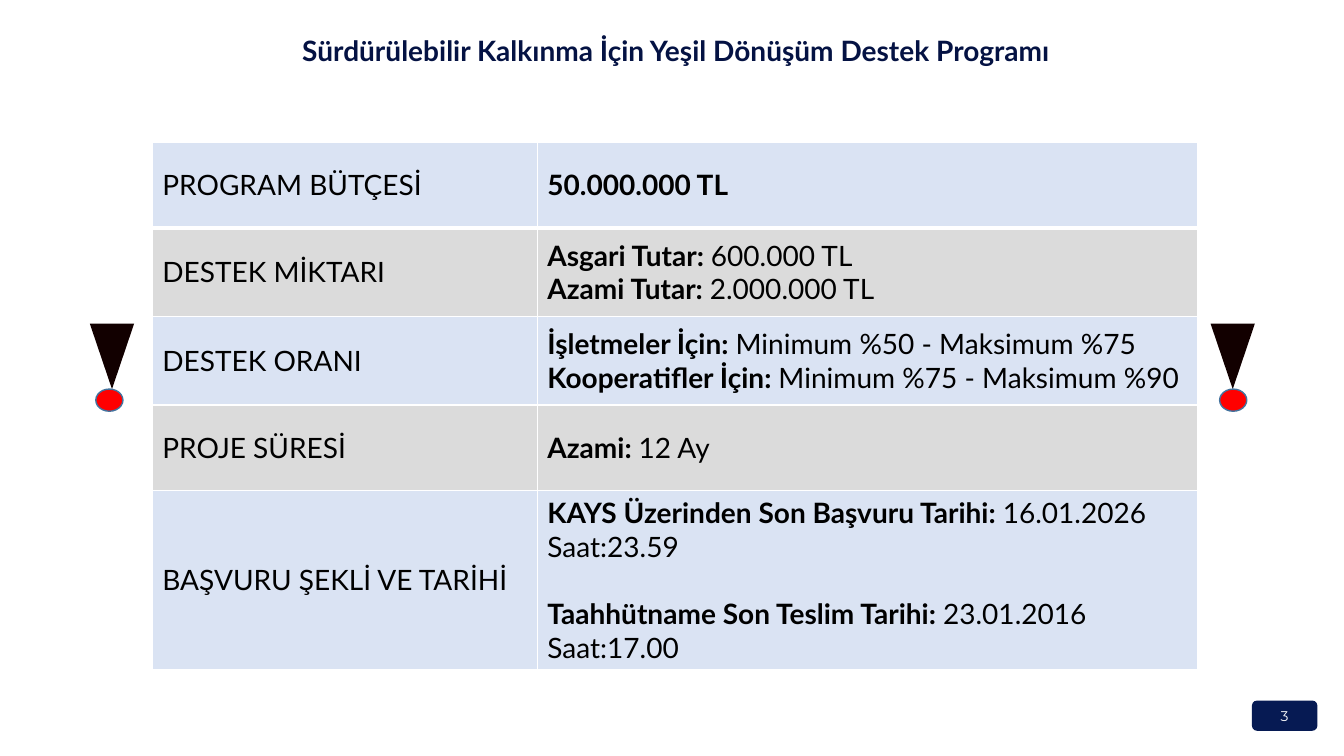
import pptx
import pptx.util
import pptx.dml.color
import pptx.enum.shapes
import pptx.enum.text
import pptx.oxml.ns
import lxml.etree

RGB = pptx.dml.color.RGBColor
SHAPE = pptx.enum.shapes.MSO_SHAPE
ALIGN = pptx.enum.text.PP_ALIGN
MIDDLE = pptx.enum.text.MSO_ANCHOR.MIDDLE
Pt = pptx.util.Pt

WHITE = RGB(0xFF, 0xFF, 0xFF)
BLACK = RGB(0, 0, 0)
NAVY = RGB(0x06, 0x1A, 0x53)
INK = RGB(0x04, 0x12, 0x43)
BLUE = RGB(0xDA, 0xE3, 0xF3)
GREY = RGB(0xDB, 0xDB, 0xDB)
RED = RGB(0xFF, 0, 0)
DARK = RGB(0x12, 0, 0)
EDGE = RGB(0x43, 0x73, 0x9E)

# The slide is a grid of 100 columns by 100 rows.
WIDE = pptx.util.Inches(13.33)
HIGH = pptx.util.Inches(7.5)

TITLE = "Sürdürülebilir Kalkınma İçin Yeşil Dönüşüm Destek Programı"
# Row height, label, then lines of (bold part, plain part).
FACTS = [
    (11.33, "PROGRAM BÜTÇESİ", [("50.000.000 TL", "")]),
    (11.73, "DESTEK MİKTARI", [("Asgari Tutar: ", "600.000 TL"),
                               ("Azami Tutar: ", "2.000.000 TL")]),
    (11.73, "DESTEK ORANI",
     [("İşletmeler İçin: ", "Minimum %50 - Maksimum %75"),
      ("Kooperatifler İçin: ", "Minimum %75 - Maksimum %90")]),
    (11.33, "PROJE SÜRESİ", [("Azami: ", "12 Ay")]),
    (23.6, "BAŞVURU ŞEKLİ VE TARİHİ",
     [("KAYS Üzerinden Son Başvuru Tarihi: ", "16.01.2026 Saat:23.59"),
      ("Taahhütname Son Teslim Tarihi: ", "23.01.2016 Saat:17.00")]),
]
DATES = len(FACTS) - 1


def col(n):
    return round(WIDE * n / 100)


def row(n):
    return round(HIGH * n / 100)


def box(x, y, w, h):
    return col(x), row(y), col(w), row(h)


def add_run(para, text, size=20, color=BLACK, bold=False, face="Lato"):
    run = para.add_run()
    run.text = text
    font = run.font
    font.name, font.size, font.bold = face, Pt(size), bold
    font.color.rgb = color


def add_shape(slide, kind, place, fill, edge=None):
    shape = slide.shapes.add_shape(kind, *box(*place))
    shape.shadow.inherit = False
    shape.fill.solid()
    shape.fill.fore_color.rgb = fill
    if edge is None:
        shape.line.fill.background()
    else:
        shape.line.color.rgb = edge
        shape.line.width = Pt(1)
    return shape


def add_title(slide):
    frame = slide.shapes.add_textbox(*box(21.75, 3.73, 69.07, 5.87)).text_frame
    frame.word_wrap = True
    add_run(frame.paragraphs[0], TITLE, color=INK, bold=True)


def add_badge(slide, text):
    badge = add_shape(slide, SHAPE.ROUNDED_RECTANGLE,
                      (93.15, 92.67, 4.87, 4), NAVY)
    frame = badge.text_frame
    frame.vertical_anchor = MIDDLE
    para = frame.paragraphs[0]
    para.alignment = ALIGN.CENTER
    add_run(para, text, 10, WHITE, face="Montserrat")


def add_mark(slide, wedge, dot):
    """Draw an exclamation mark from the left columns of its two parts."""
    body = add_shape(slide, SHAPE.ISOSCELES_TRIANGLE,
                     (wedge, 42.8, 3.3, 8.67), DARK)
    body.rotation = 180
    add_shape(slide, SHAPE.FLOWCHART_CONNECTOR,
              (dot, 51.47, 2.02, 2.93), RED, EDGE)


def set_edge(cell, side, width):
    qn = pptx.oxml.ns.qn
    props = cell._tc.get_or_add_tcPr()
    line = lxml.etree.SubElement(props, qn("a:ln" + side), w=str(Pt(width)))
    fill = lxml.etree.SubElement(line, qn("a:solidFill"))
    lxml.etree.SubElement(fill, qn("a:srgbClr"), val=str(WHITE))


def style_cell(cell, top, base, fill):
    for side, width in zip("LRTB", (1, 1, top, base)):
        set_edge(cell, side, width)
    cell.fill.solid()
    cell.fill.fore_color.rgb = fill
    cell.vertical_anchor = MIDDLE


def add_facts(slide):
    high = sum(fact[0] for fact in FACTS)
    table = slide.shapes.add_table(
        len(FACTS), 2, *box(11.33, 18.8, 77.77, high)).table
    table.first_row = table.horz_banding = False
    for part, width in zip(table.columns, (28.65, 49.12)):
        part.width = col(width)
    for i, (tall, label, lines) in enumerate(FACTS):
        table.rows[i].height = row(tall)
        name, value = table.cell(i, 0), table.cell(i, 1)
        for cell in (name, value):
            style_cell(cell, 3 if i == 1 else 1, 3 if i == 0 else 1,
                       GREY if i % 2 else BLUE)
        add_run(name.text_frame.paragraphs[0], label)
        frame = value.text_frame
        for j, (strong, plain) in enumerate(lines):
            para = frame.add_paragraph() if j else frame.paragraphs[0]
            if j and i == DATES:
                para.space_before = Pt(24)
            add_run(para, strong, bold=True)
            if plain:
                add_run(para, plain)


def main():
    deck = pptx.Presentation()
    deck.slide_width, deck.slide_height = WIDE, HIGH
    slide = deck.slides.add_slide(deck.slide_layouts[6])
    add_badge(slide, "3")
    add_facts(slide)
    for wedge, dot in ((6.68, 7.13), (90.07, 90.75)):
        add_mark(slide, wedge, dot)
    add_title(slide)
    deck.save("out.pptx")


if __name__ == "__main__":
    main()
